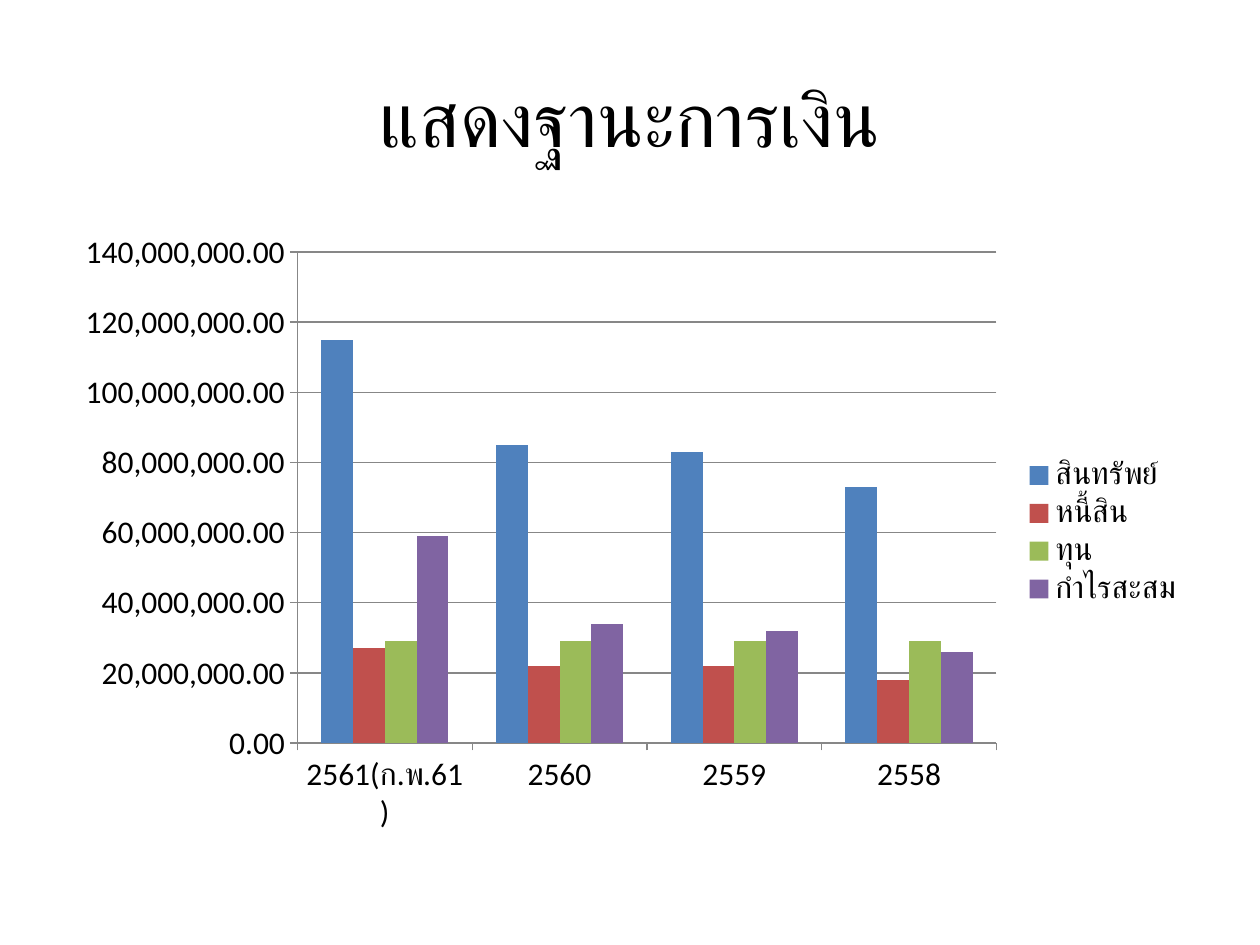
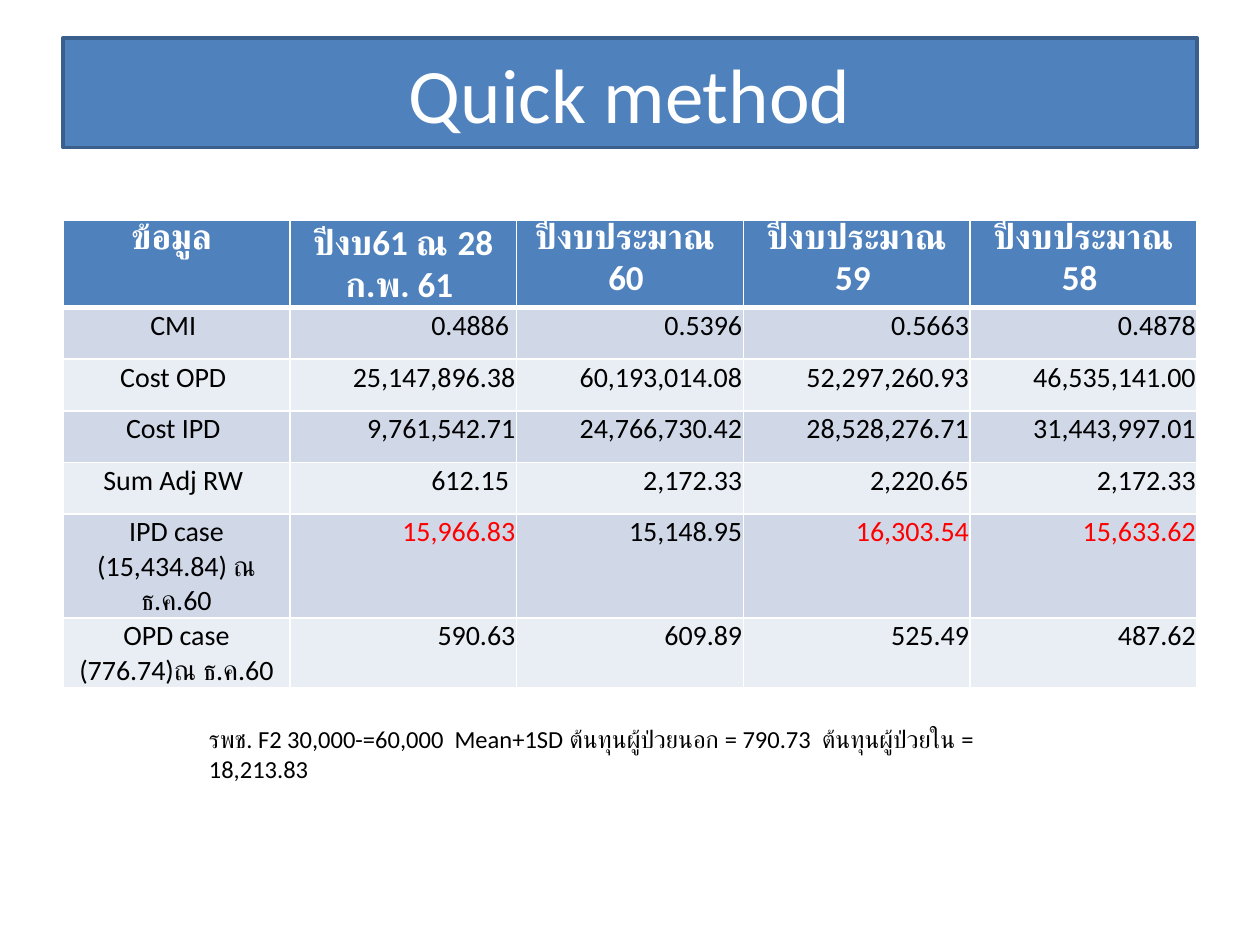
"""Build two slides: a chart of financial standing and a table of unit costs."""
from lxml import etree
from pptx import Presentation
from pptx.chart.data import CategoryChartData
from pptx.dml.color import RGBColor
from pptx.enum.chart import XL_CHART_TYPE, XL_LEGEND_POSITION, XL_TICK_MARK
from pptx.enum.text import MSO_ANCHOR, MSO_AUTO_SIZE, PP_ALIGN
from pptx.oxml.ns import qn
from pptx.util import Inches, Pt

COLUMN = XL_CHART_TYPE.COLUMN_CLUSTERED
RIGHT_KEY = XL_LEGEND_POSITION.RIGHT
OUT = XL_TICK_MARK.OUTSIDE
MIDDLE = MSO_ANCHOR.MIDDLE
GROW = MSO_AUTO_SIZE.SHAPE_TO_FIT_TEXT
LEFT, CENTER, RIGHT = PP_ALIGN.LEFT, PP_ALIGN.CENTER, PP_ALIGN.RIGHT

FONT = "Calibri"
COLORS = {
    "black": "000000", "white": "FFFFFF", "alert": "FF0000",
    "blue": "4F81BD", "edge": "3A5F8C", "red": "C0504D",
    "green": "9BBB59", "purple": "8064A2", "grid": "878787",
    "dark": "D0D8E8", "light": "E9EDF4",
}
SIDE, TOP, WIDTH = 0.5, 1.75, 9

YEARS = ["2561(ก.พ.61)", "2560", "2559", "2558"]
MILLION = 1_000_000
SERIES = [
    ("สินทรัพย์", "blue", [115, 85, 83, 73]),
    ("หนี้สิน", "red", [27, 22, 22, 18]),
    ("ทุน", "green", [29, 29, 29, 29]),
    ("กำไรสะสม", "purple", [59, 34, 32, 26]),
]

ROWS = [
    ["ข้อมูล ", "ปีงบ61 ณ 28 ก.พ. 61 ", "ปีงบประมาณ  60 ",
     "ปีงบประมาณ 59 ", "ปีงบประมาณ 58 "],
    ["CMI ", "0.4886 ", "0.5396", "0.5663", "0.4878"],
    ["Cost OPD ", "25,147,896.38", "60,193,014.08", "52,297,260.93",
     "46,535,141.00"],
    ["Cost IPD ", "9,761,542.71", "24,766,730.42", "28,528,276.71",
     "31,443,997.01"],
    ["Sum Adj RW ", "612.15 ", "2,172.33", "2,220.65", "2,172.33"],
    ["IPD case (15,434.84) ณ ธ.ค.60", "15,966.83", "15,148.95",
     "16,303.54", "15,633.62"],
    ["OPD case (776.74)ณ ธ.ค.60", "590.63", "609.89", "525.49", "487.62"],
]
ALERTS = {(5, 1), (5, 3), (5, 4)}
HEAD, ROW = 0.67, 0.41
NOTE = ("รพช. F2 30,000-=60,000  Mean+1SD ต้นทุนผู้ป่วยนอก = 790.73  "
        "ต้นทุนผู้ป่วยใน = 18,213.83")


def rgb(name):
    return RGBColor.from_string(COLORS[name])


def box(left, top, width, height):
    return [Inches(n) for n in (left, top, width, height)]


def style(font, size, color, bold=False):
    font.name, font.size, font.bold = FONT, Pt(size), bold
    font.color.rgb = rgb(color)


def write(frame, text, size, color, align=LEFT, bold=False):
    para = frame.paragraphs[0]
    para.alignment = align
    run = para.add_run()
    run.text = text
    style(run.font, size, color, bold)


def add_page(deck, title, height, color):
    page = deck.slides.add_slide(deck.slide_layouts[5])
    head = page.shapes.title
    head.left, head.top, head.width, head.height = box(SIDE, 0.3, WIDTH, height)
    head.text_frame.vertical_anchor = MIDDLE
    write(head.text_frame, title, 44, color, CENTER)
    return page


def add_bars(page):
    data = CategoryChartData(number_format="#,##0.00")
    data.categories = YEARS
    for name, _, vals in SERIES:
        data.add_series(name, [val * MILLION for val in vals])
    frame = page.shapes.add_chart(COLUMN, *box(SIDE, TOP, WIDTH, 4.95), data)
    chart = frame.chart
    style(chart.font, 18, "black")
    chart.has_title = False
    chart.has_legend = True
    chart.legend.position = RIGHT_KEY
    chart.legend.include_in_layout = False
    plot = chart.plots[0]
    plot.gap_width = 150
    plot.vary_by_categories = False
    for bars, (_, color, _) in zip(plot.series, SERIES):
        bars.format.fill.solid()
        bars.format.fill.fore_color.rgb = rgb(color)
    vals = chart.value_axis
    vals.has_major_gridlines = True
    vals.tick_labels.number_format = "#,##0.00"
    vals.tick_labels.number_format_is_linked = False
    for axis in (vals, chart.category_axis):
        axis.major_tick_mark = OUT
    for part in (vals, vals.major_gridlines, chart.category_axis):
        part.format.line.color.rgb = rgb("grid")
        part.format.line.width = Pt(0.75)


def add_edge(cell, side, points):
    props = cell._tc.get_or_add_tcPr()
    line = etree.SubElement(props, qn("a:ln" + side), w=str(Pt(points)))
    fill = etree.SubElement(line, qn("a:solidFill"))
    etree.SubElement(fill, qn("a:srgbClr"), val=COLORS["white"])


def fill_cell(cell, row, col, text):
    cell.margin_left = cell.margin_right = cell.margin_top = Inches(0.01)
    cell.margin_bottom = 0
    edges = {"L": 1, "R": 1, "T": 3 if row == 1 else 1, "B": 1 if row else 3}
    for side, points in edges.items():
        add_edge(cell, side, points)
    shade = "blue" if row == 0 else "dark" if row % 2 else "light"
    cell.fill.solid()
    cell.fill.fore_color.rgb = rgb(shade)
    align = RIGHT if row and col else CENTER
    if row == 0:
        write(cell.text_frame, text, 20, "white", align, True)
    else:
        color = "alert" if (row, col) in ALERTS else "black"
        write(cell.text_frame, text, 16, color, align)


def add_costs(page):
    count = len(ROWS[0])
    tall = HEAD + ROW * (len(ROWS) - 1)
    frame = page.shapes.add_table(len(ROWS), count, *box(SIDE, TOP, WIDTH, tall))
    table = frame.table
    for column in table.columns:
        column.width = Inches(WIDTH / count)
    for row, texts in enumerate(ROWS):
        table.rows[row].height = Inches(ROW if row else HEAD)
        for col, text in enumerate(texts):
            fill_cell(table.cell(row, col), row, col, text)


def add_note(page):
    frame = page.shapes.add_textbox(*box(1.56, 5.7, 7.03, 0.34)).text_frame
    frame.word_wrap = True
    frame.auto_size = GROW
    write(frame, NOTE, 14, "black")


def main():
    deck = Presentation()
    deck.slide_width, deck.slide_height = Inches(10), Inches(7.5)

    add_bars(add_page(deck, "แสดงฐานะการเงิน", 1.25, "black"))

    page = add_page(deck, "Quick method", 0.87, "white")
    band = page.shapes.title
    band.fill.solid()
    band.fill.fore_color.rgb = rgb("blue")
    band.line.color.rgb = rgb("edge")
    band.line.width = Pt(2)
    add_costs(page)
    add_note(page)

    deck.save("out.pptx")


if __name__ == "__main__":
    main()
